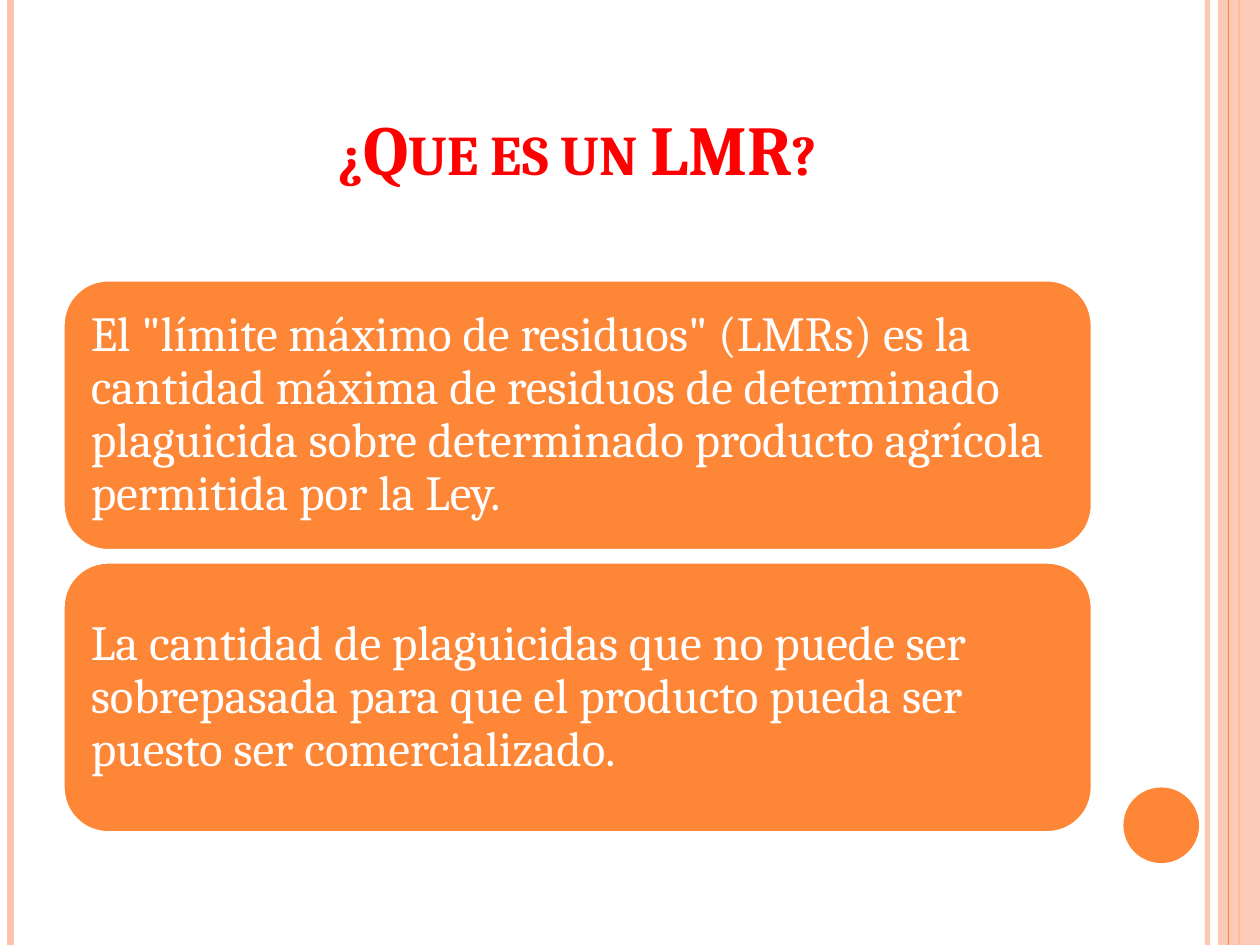
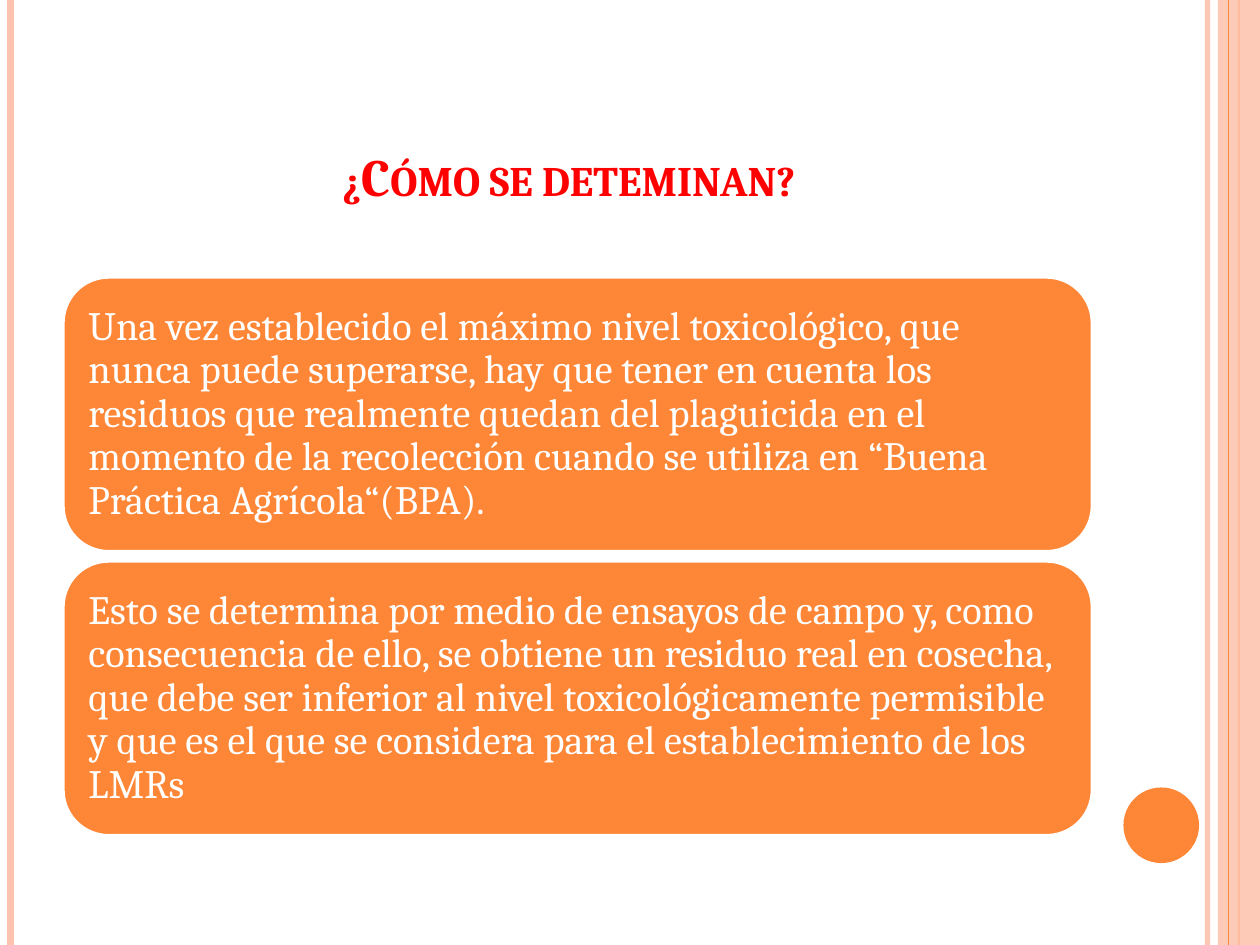
"""Two slides on maximum residue limits, each a title above two rounded panels."""
from lxml import etree
from pptx import Presentation
from pptx.dml.color import RGBColor
from pptx.enum import shapes, text
from pptx.oxml.ns import qn
from pptx.util import Pt

WIDTH, HEIGHT = 720, 540
FONT = "Cambria"
ORANGE, PEACH, WHITE, RED = "FE8637", "FEC3AE", "FFFFFF", "FF0000"
LEFT, PANEL_WIDTH, PANELS_MIDDLE = 36, 588.24, 317.9
TITLE_HEIGHT = 90

RULES_BEHIND = [(690, PEACH, 3, 93), (6, PEACH, 4.5, 100), (708, ORANGE, 1.5, 100)]
RULE_IN_FRONT = (702, ORANGE, 0.75, 100)
SIDE_BAND = (696, 0, 24, HEIGHT)
DISC = (642, 450, 43.2, 43.2)

SLIDES = [
    {"title": "¿Que es un LMR?", "title_at": (36, 21.6), "title_size": 40,
     "panel_size": 28, "panel_height": 154.8,
     "panels": [
         'El "límite máximo de residuos" (LMRs) es la cantidad máxima de residuos de '
         "determinado plaguicida sobre determinado producto agrícola permitida por la Ley.",
         "La cantidad de plaguicidas que no puede ser sobrepasada para que el producto "
         "pueda ser puesto ser comercializado."]},
    {"title": "¿Cómo se deteminan?", "title_at": (31, 31.7), "title_size": 30,
     "panel_size": 23, "panel_height": 157,
     "panels": [
         "Una vez establecido el máximo nivel toxicológico, que nunca puede superarse, hay "
         "que tener en cuenta los residuos que realmente quedan del plaguicida en el momento "
         "de la recolección cuando se utiliza en “Buena Práctica Agrícola“(BPA).",
         "Esto se determina por medio de ensayos de campo y, como consecuencia de ello, se "
         "obtiene un residuo real en cosecha, que debe ser inferior al nivel "
         "toxicológicamente permisible y que es el que se considera para el "
         "establecimiento de los LMRs"]},
]


def paint(fill, color, opacity=100):
    fill.solid()
    fill.fore_color.rgb = RGBColor.from_string(color)
    if opacity < 100:
        tint = fill._xPr.find(qn("a:solidFill"))[0]
        etree.SubElement(tint, qn("a:alpha")).set("val", str(opacity * 1000))


def add_rule(slide, x, color, weight, opacity):
    rule = slide.shapes.add_connector(
        shapes.MSO_CONNECTOR.STRAIGHT, Pt(x), Pt(0), Pt(x), Pt(HEIGHT))
    paint(rule.line.fill, color, opacity)
    rule.line.width = Pt(weight)
    etree.SubElement(rule._element.spPr, qn("a:effectLst"))


def add_figure(slide, preset, box, color, opacity=100):
    figure = slide.shapes.add_shape(preset, *map(Pt, box))
    figure.shadow.inherit = False
    paint(figure.fill, color, opacity)
    figure.line.fill.background()
    return figure


def write(frame, wording, size, color, align, anchor):
    frame.word_wrap = True
    frame.vertical_anchor = anchor
    paragraph = frame.paragraphs[0]
    paragraph.alignment = align
    run = paragraph.add_run()
    run.text = wording
    run.font.name, run.font.size = FONT, Pt(size)
    paint(run.font.fill, color)
    return paragraph, run


def add_surround(slide):
    for rule in RULES_BEHIND:
        add_rule(slide, *rule)
    add_figure(slide, shapes.MSO_SHAPE.RECTANGLE, SIDE_BAND, PEACH, 87)
    add_rule(slide, *RULE_IN_FRONT)
    add_figure(slide, shapes.MSO_SHAPE.OVAL, DISC, ORANGE)


def add_title(slide, wording, at, size):
    title = slide.shapes.add_textbox(*map(Pt, (*at, PANEL_WIDTH, TITLE_HEIGHT)))
    _, run = write(title.text_frame, wording, size, RED,
                   text.PP_ALIGN.CENTER, text.MSO_ANCHOR.BOTTOM)
    run.font.bold = True
    run.font._element.set("cap", "small")


def add_panels(slide, wordings, size, height):
    gap, inset = size * 0.23, Pt(size * 0.3)
    step = height + gap
    top = PANELS_MIDDLE - (len(wordings) * step - gap) / 2
    for row, wording in enumerate(wordings):
        panel = add_figure(slide, shapes.MSO_SHAPE.ROUNDED_RECTANGLE,
                           (LEFT, top + row * step, PANEL_WIDTH, height), ORANGE)
        paint(panel.line.fill, WHITE)
        panel.line.width = Pt(2)
        frame = panel.text_frame
        frame.margin_left = frame.margin_right = inset
        frame.margin_top = frame.margin_bottom = inset
        paragraph, _ = write(frame, wording, size, WHITE,
                             text.PP_ALIGN.LEFT, text.MSO_ANCHOR.MIDDLE)
        paragraph.line_spacing = 0.9


def main():
    deck = Presentation()
    deck.slide_width, deck.slide_height = Pt(WIDTH), Pt(HEIGHT)
    for content in SLIDES:
        slide = deck.slides.add_slide(deck.slide_layouts[6])
        paint(slide.background.fill, WHITE)
        add_surround(slide)
        add_title(slide, content["title"], content["title_at"], content["title_size"])
        add_panels(slide, content["panels"], content["panel_size"], content["panel_height"])
    deck.save("out.pptx")


if __name__ == "__main__":
    main()
